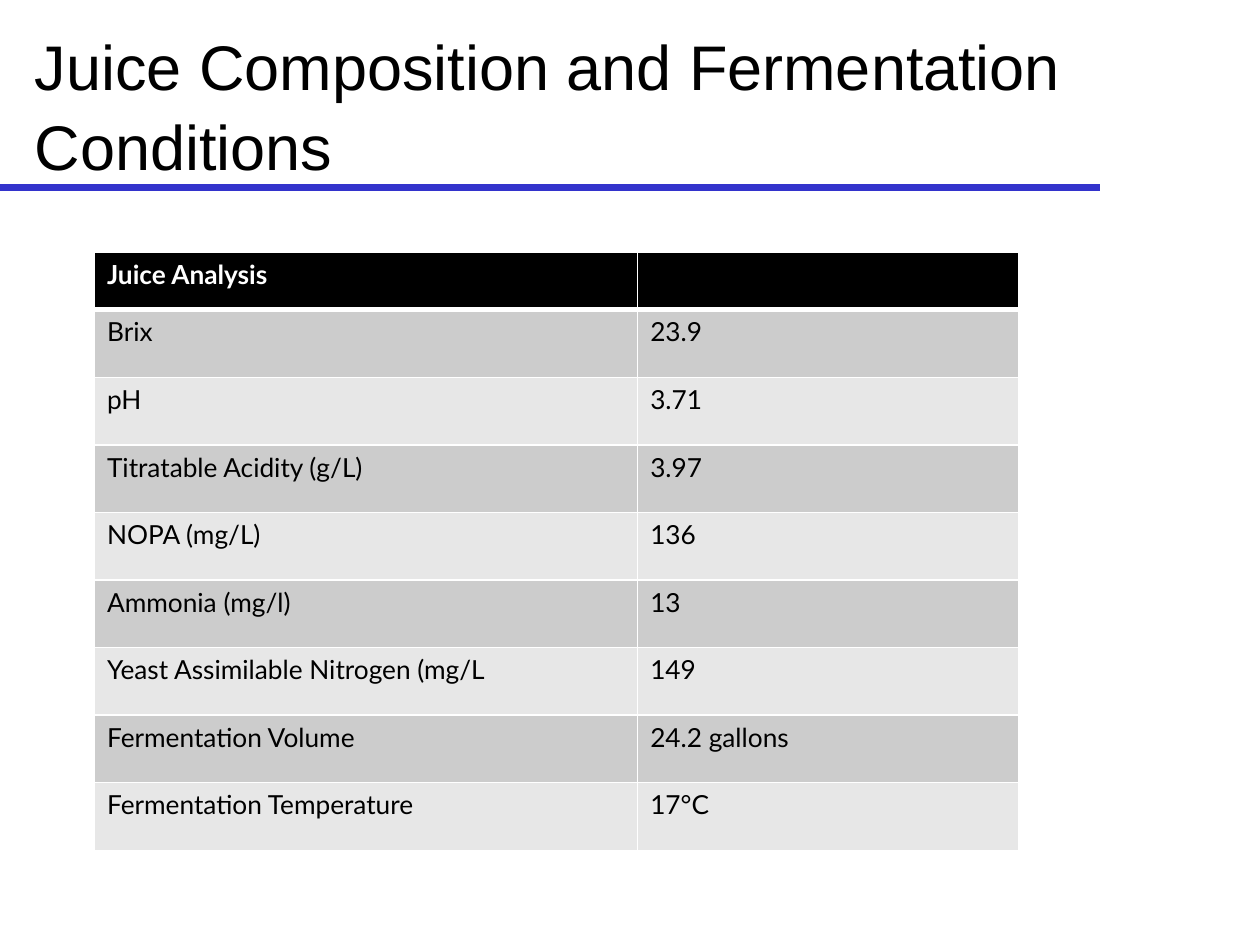
from lxml.etree import SubElement
from pptx import Presentation
from pptx.dml.color import RGBColor
from pptx.enum.shapes import MSO_CONNECTOR
from pptx.enum.text import MSO_ANCHOR, MSO_AUTO_SIZE, PP_ALIGN
from pptx.oxml.ns import qn
from pptx.util import Pt

BLACK = RGBColor(0x00, 0x00, 0x00)
WHITE = RGBColor(0xFF, 0xFF, 0xFF)
BLUE = RGBColor(0x33, 0x33, 0xCC)
DARK_BAND = RGBColor(0xCC, 0xCC, 0xCC)
LIGHT_BAND = RGBColor(0xE7, 0xE7, 0xE7)

JUICE_ROWS = [
    ("Juice Analysis", ""),
    ("Brix", "23.9"),
    ("pH", "3.71"),
    ("Titratable Acidity (g/L)", "3.97"),
    ("NOPA (mg/L)", "136"),
    ("Ammonia (mg/l)", "13"),
    ("Yeast Assimilable Nitrogen (mg/L", "149"),
    ("Fermentation Volume", "24.2 gallons"),
    ("Fermentation Temperature", "17°C"),
]


def add_run(p, text, font, size, color, bold=False):
    r = p.add_run()
    r.text = text
    r.font.name = font
    r.font.size = Pt(size)
    r.font.color.rgb = color
    r.font.bold = bold


def add_rule(s, x, y, w):
    line = s.shapes.add_connector(MSO_CONNECTOR.STRAIGHT, Pt(x), Pt(y), Pt(x + w), Pt(y))
    line.line.color.rgb = BLUE
    line.line.width = Pt(4)
    SubElement(line._element.spPr, qn("a:effectLst"))


def add_title(s, x, y, w, h):
    sp = s.shapes.title
    sp.left, sp.top, sp.width, sp.height = Pt(x), Pt(y), Pt(w), Pt(h)
    tf = sp.text_frame
    tf.word_wrap = True
    tf.auto_size = MSO_AUTO_SIZE.NONE
    tf.vertical_anchor = MSO_ANCHOR.BOTTOM
    tf.margin_left = tf.margin_right = Pt(7.8)
    p = tf.paragraphs[0]
    p.alignment = PP_ALIGN.LEFT
    p.line_spacing = 1.05
    add_run(p, "Juice Composition and Fermentation Conditions", "Arial", 36, BLACK)


def set_borders(cell, widths):
    """Draw white borders; they must precede the fill in the cell properties."""
    tcPr = cell._tc.get_or_add_tcPr()
    for side, width in widths.items():
        ln = SubElement(tcPr, qn(f"a:ln{side}"), w=str(Pt(width)))
        fill = SubElement(ln, qn("a:solidFill"))
        SubElement(fill, qn("a:srgbClr"), val=str(WHITE))


def add_juice_table(s, x, y, w, h, first_col=310.4, header_h=33):
    n = len(JUICE_ROWS)
    table = s.shapes.add_table(n, 2, Pt(x), Pt(y), Pt(w), Pt(h)).table
    table.columns[0].width = Pt(first_col)
    table.columns[1].width = Pt(w - first_col)
    for i, values in enumerate(JUICE_ROWS):
        header = i == 0
        table.rows[i].height = Pt(header_h if header else (h - header_h) / (n - 1))
        band = BLACK if header else DARK_BAND if i % 2 else LIGHT_BAND
        for j, text in enumerate(values):
            cell = table.cell(i, j)
            set_borders(cell, {"L": 1, "R": 1, "T": 3 if i == 1 else 1, "B": 3 if header else 1})
            cell.fill.solid()
            cell.fill.fore_color.rgb = band
            if text:
                p = cell.text_frame.paragraphs[0]
                add_run(p, text, "Lato", 15, WHITE if header else BLACK, header)


def main():
    prs = Presentation()
    prs.slide_width, prs.slide_height = Pt(720), Pt(540)
    s = prs.slides.add_slide(prs.slide_layouts[5])  # title only

    # Heading with its rule
    add_rule(s, 0, 107, 628.5)
    add_title(s, 12, 21, 660, 87)

    # Juice analysis
    add_juice_table(s, 54, 144, 528, 342)

    prs.save("out.pptx")


if __name__ == "__main__":
    main()
